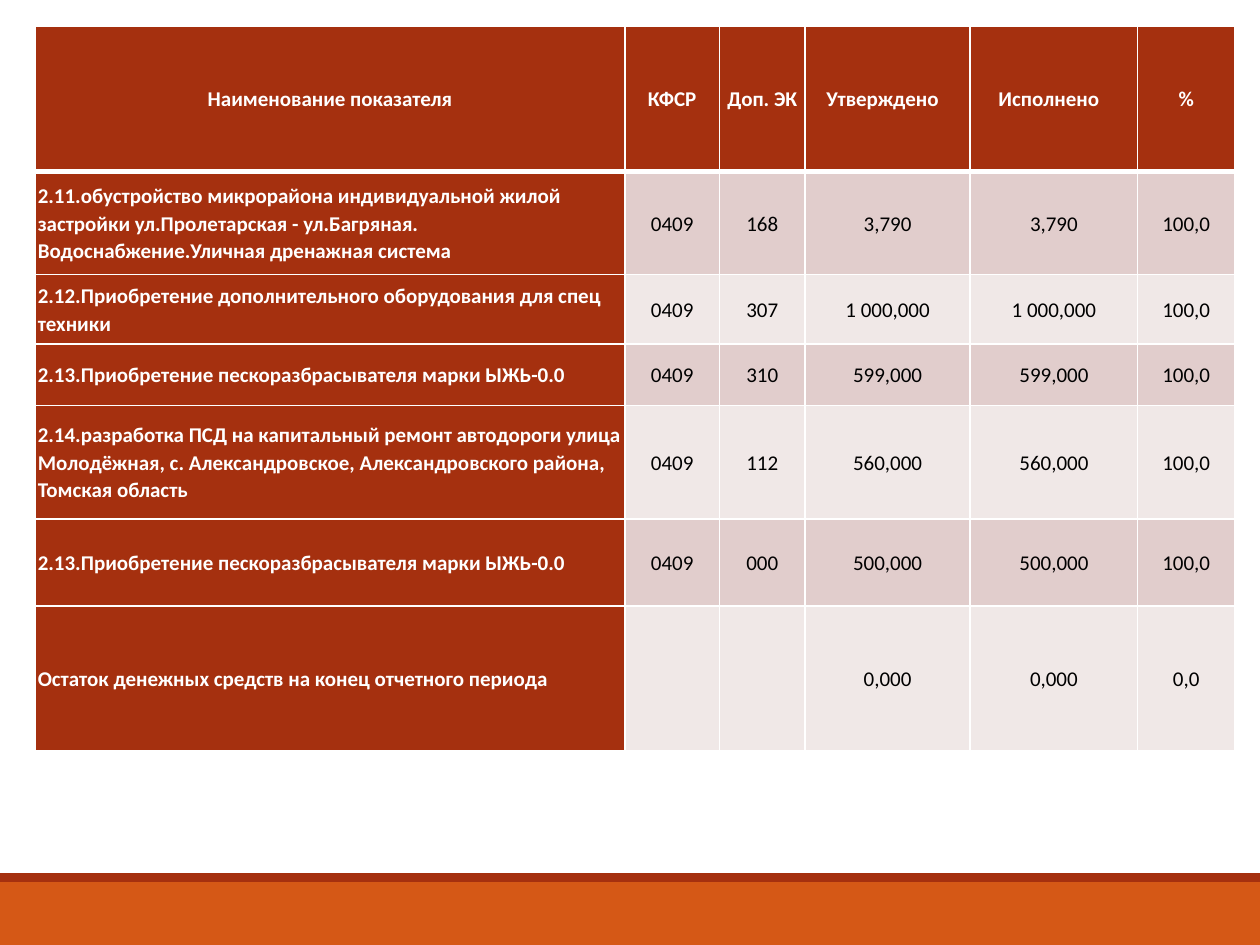
from dataclasses import dataclass

from lxml.etree import SubElement
from pptx import Presentation
from pptx.dml.color import RGBColor
from pptx.enum.shapes import MSO_SHAPE as Shape
from pptx.enum.text import MSO_ANCHOR as Anchor, PP_ALIGN as Align
from pptx.oxml.ns import qn
from pptx.util import Inches, Pt

SLIDE_WIDTH, SLIDE_HEIGHT = 10, 7.5
TABLE_LEFT, TABLE_TOP = 0.28, 0.21
RUST, ORANGE, WHITE, BLACK = "A5300F", "D55816", "FFFFFF", "000000"
ROW_FILLS = ("E1CDCC", "F0E8E7")
INSET = 0.02
SPREADER = "2.13.Приобретение пескоразбрасывателя марки ЫЖЬ-0.0"


@dataclass(frozen=True)
class Column:
    heading: str
    width: float
    heading_inset: float = INSET


@dataclass(frozen=True)
class Row:
    height: float
    values: tuple[str, ...]


@dataclass(frozen=True)
class Band:
    top: float
    height: float
    fill: str


COLUMNS = (
    Column("Наименование показателя", 4.68),
    Column("КФСР", 0.75),
    Column("Доп. ЭК", 0.68),
    Column("Утверждено", 1.31, heading_inset=0.1),
    Column("Исполнено", 1.33, heading_inset=0.1),
    Column("%", 0.77),
)

ROWS = (
    Row(1.15, tuple(column.heading for column in COLUMNS)),
    Row(0.82, ("2.11.обустройство микрорайона индивидуальной жилой застройки "
               "ул.Пролетарская - ул.Багряная. Водоснабжение.Уличная дренажная система",
               "0409", "168", "3,790", "3,790", "100,0")),
    Row(0.55, ("2.12.Приобретение дополнительного оборудования для спец техники",
               "0409", "307", "1 000,000", "1 000,000", "100,0")),
    Row(0.49, (SPREADER, "0409", "310", "599,000", "599,000", "100,0")),
    Row(0.9, ("2.14.разработка ПСД на капитальный ремонт автодороги улица Молодёжная, "
              "с. Александровское, Александровского района, Томская область",
              "0409", "112", "560,000", "560,000", "100,0")),
    Row(0.69, (SPREADER, "0409", "000", "500,000", "500,000", "100,0")),
    Row(1.15, ("Остаток денежных средств на конец отчетного периода",
               "", "", "0,000", "0,000", "0,0")),
)

BANDS = (Band(7, 0.5, ORANGE), Band(6.93, 0.07, RUST))


def color(value: str) -> RGBColor:
    return RGBColor.from_string(value)


def draw_band(slide, band: Band) -> None:
    shape = slide.shapes.add_shape(Shape.RECTANGLE, 0, Inches(band.top),
                                   Inches(SLIDE_WIDTH), Inches(band.height))
    shape.shadow.inherit = False
    shape.fill.solid()
    shape.fill.fore_color.rgb = color(band.fill)
    shape.line.fill.background()


def set_borders(cell, top: float, bottom: float) -> None:
    """Draw white cell borders; widths are in points."""
    properties = cell._tc.get_or_add_tcPr()
    widths = {"a:lnL": 1, "a:lnR": 1, "a:lnT": top, "a:lnB": bottom}
    # Borders must come before the fill
    for position, (tag, width) in enumerate(widths.items()):
        line = SubElement(properties, qn(tag), w=str(Pt(width)))
        SubElement(SubElement(line, qn("a:solidFill")), qn("a:srgbClr"), val=WHITE)
        properties.insert(position, line)


def draw_cell(cell, text: str, row: int, column: int) -> None:
    is_header = row == 0
    is_accent = is_header or column == 0
    cell.fill.solid()
    cell.fill.fore_color.rgb = color(RUST if is_accent else ROW_FILLS[(row - 1) % 2])
    set_borders(cell, top=3 if row == 1 else 1, bottom=3 if is_header else 1)
    if not text:
        return

    cell.vertical_anchor = Anchor.MIDDLE
    cell.margin_top = cell.margin_bottom = 0
    cell.margin_left = Inches(INSET)
    cell.margin_right = Inches(COLUMNS[column].heading_inset if is_header else INSET)
    cell.text = text
    paragraph = cell.text_frame.paragraphs[0]
    paragraph.alignment = Align.CENTER if is_header or column else Align.LEFT
    paragraph.line_spacing = 1.07
    font = paragraph.font
    font.name, font.size, font.bold = "Calibri", Pt(12), is_accent
    font.color.rgb = color(WHITE if is_accent else BLACK)


def draw_table(slide, columns: tuple[Column, ...], rows: tuple[Row, ...]) -> None:
    table = slide.shapes.add_table(
        len(rows), len(columns), Inches(TABLE_LEFT), Inches(TABLE_TOP),
        Inches(sum(column.width for column in columns)),
        Inches(sum(row.height for row in rows))).table
    for index, column in enumerate(columns):
        table.columns[index].width = Inches(column.width)
    for row_index, row in enumerate(rows):
        table.rows[row_index].height = Inches(row.height)
        for column_index, text in enumerate(row.values):
            draw_cell(table.cell(row_index, column_index), text, row_index, column_index)


def main() -> None:
    presentation = Presentation()
    presentation.slide_width = Inches(SLIDE_WIDTH)
    presentation.slide_height = Inches(SLIDE_HEIGHT)
    slide = presentation.slides.add_slide(presentation.slide_layouts[6])

    # Footer bands
    for band in BANDS:
        draw_band(slide, band)

    # Budget execution table
    draw_table(slide, COLUMNS, ROWS)
    presentation.save("out.pptx")


if __name__ == "__main__":
    main()
